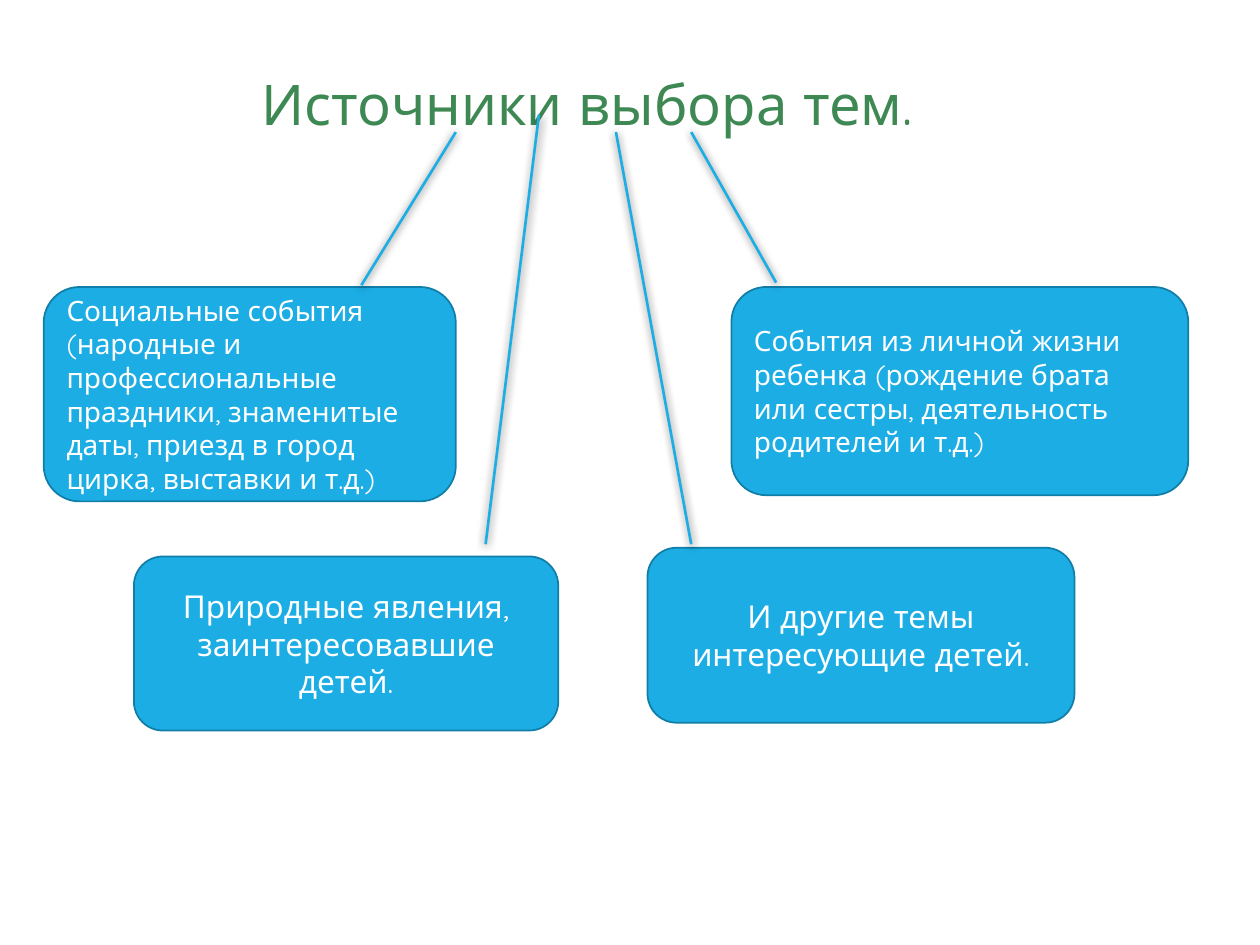
from dataclasses import dataclass

from lxml.etree import SubElement
from pptx import Presentation
from pptx.dml.color import RGBColor
from pptx.enum.shapes import MSO_CONNECTOR, MSO_SHAPE
from pptx.enum.text import MSO_ANCHOR, PP_ALIGN
from pptx.oxml.ns import qn
from pptx.shapes.base import BaseShape
from pptx.slide import Slide
from pptx.util import Pt


@dataclass(frozen=True)
class Theme:
    font: str = "Quicksand"
    title_color: RGBColor = RGBColor(0x3E, 0x88, 0x53)
    fill: RGBColor = RGBColor(0x1C, 0xAD, 0xE4)
    border: RGBColor = RGBColor(0x11, 0x7E, 0xA7)
    card_text: RGBColor = RGBColor(0xFF, 0xFF, 0xFF)
    title_size: float = 32
    long_size: float = 16
    short_size: float = 18


THEME = Theme()


@dataclass(frozen=True)
class Card:
    text: str
    left: float
    top: float
    width: float
    height: float
    size: float
    align: PP_ALIGN


@dataclass(frozen=True)
class Ray:
    start_x: float
    start_y: float
    end_x: float
    end_y: float


CARDS = [
    Card("Социальные события (народные и профессиональные праздники, знаменитые "
         "даты, приезд в город цирка, выставки и т.д.)",
         25, 164, 235.5, 122.5, THEME.long_size, PP_ALIGN.LEFT),
    Card("События из личной жизни ребенка (рождение брата или сестры, "
         "деятельность родителей и т.д.)",
         418, 164, 261, 119, THEME.long_size, PP_ALIGN.LEFT),
    Card("Природные явления, заинтересовавшие детей.",
         76.5, 318, 242.5, 99.5, THEME.short_size, PP_ALIGN.CENTER),
    Card("И другие темы интересующие детей.",
         370, 313, 244, 100, THEME.short_size, PP_ALIGN.CENTER),
]

RAYS = [
    Ray(260.5, 75.5, 206.5, 163),
    Ray(395, 75.5, 443.5, 161.5),
    Ray(308, 65.5, 277.5, 311),
    Ray(352, 75.5, 395, 311),
]


def write_text(shape: BaseShape, text: str, *, size: float, color: RGBColor,
               align: PP_ALIGN = PP_ALIGN.LEFT,
               anchor: MSO_ANCHOR = MSO_ANCHOR.TOP) -> None:
    frame = shape.text_frame
    frame.word_wrap = True
    frame.vertical_anchor = anchor
    para = frame.paragraphs[0]
    para.alignment = align
    span = para.add_run()
    span.text = text
    span.font.name = THEME.font
    span.font.size = Pt(size)
    span.font.color.rgb = color


def draw_card(page: Slide, card: Card) -> None:
    box = page.shapes.add_shape(
        MSO_SHAPE.ROUNDED_RECTANGLE,
        Pt(card.left), Pt(card.top), Pt(card.width), Pt(card.height))
    box.shadow.inherit = False
    box.fill.solid()
    box.fill.fore_color.rgb = THEME.fill
    box.line.color.rgb = THEME.border
    box.line.width = Pt(1)
    write_text(box, card.text, size=card.size, color=THEME.card_text,
               align=card.align, anchor=MSO_ANCHOR.MIDDLE)


def draw_ray(page: Slide, ray: Ray) -> None:
    """Draw a line from the title towards a card, with a soft shadow below."""
    line = page.shapes.add_connector(
        MSO_CONNECTOR.STRAIGHT,
        Pt(ray.start_x), Pt(ray.start_y), Pt(ray.end_x), Pt(ray.end_y))
    line.line.color.rgb = THEME.fill
    line.line.width = Pt(1.5)
    effects = SubElement(line._element.spPr, qn("a:effectLst"))
    shadow = SubElement(effects, qn("a:outerShdw"), blurRad=str(Pt(5)),
                        dist=str(Pt(1)), dir="5400000", rotWithShape="0")
    black = SubElement(shadow, qn("a:srgbClr"), val="000000")
    SubElement(black, qn("a:alpha"), val="63000")


def main() -> None:
    deck = Presentation()
    deck.slide_width, deck.slide_height = Pt(720), Pt(540)
    page = deck.slides.add_slide(deck.slide_layouts[6])

    title = page.shapes.add_textbox(Pt(142.5), Pt(36), Pt(406), Pt(46))
    write_text(title, "Источники выбора тем.",
               size=THEME.title_size, color=THEME.title_color)
    for card in CARDS:
        draw_card(page, card)
    for ray in RAYS:
        draw_ray(page, ray)
    deck.save("out.pptx")


if __name__ == "__main__":
    main()
